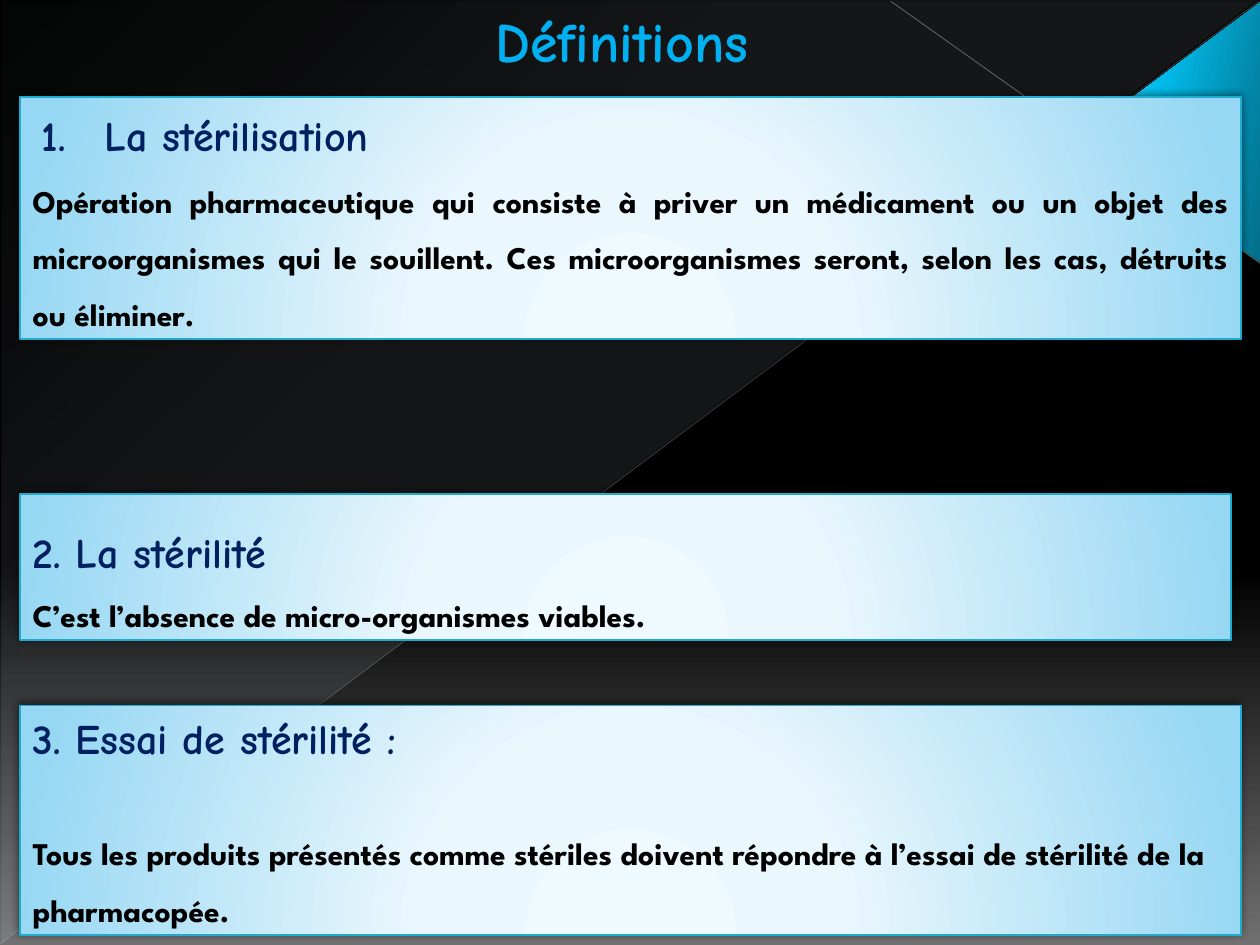
from dataclasses import dataclass

from lxml import etree
from pptx import Presentation
from pptx import util as u
from pptx.dml.color import RGBColor
from pptx.enum import shapes, text
from pptx.oxml import parse_xml
from pptx.oxml.ns import nsdecls, qn


@dataclass(frozen=True)
class Theme:
    """Fonts, type sizes, colours and gradient stops of the slide."""
    head_font: str = "Comic Neue"
    body_font: str = "League Spartan"
    title_size: int = 32
    head_size: int = 24
    body_size: int = 18
    title: str = "00B0F0"
    head: str = "002060"
    body: str = "000000"
    edge: str = "1EABCE"
    back: tuple = ((0, "000000", 100), (60, "000000", 100), (100, "707070", 100))
    veil: tuple = ((0, "DEF5FA", 10), (70, "DEF5FA", 8), (100, "DEF5FA", 1))
    wedge: tuple = ((0, "036E89", 100), (60, "01BCEB", 100), (100, "7CD1F2", 100))
    panel: tuple = ((0, "EEFAFF", 100), (34, "EAF7FD", 100), (100, "96D7F3", 100))


THEME = Theme()
GLOW = ('<a:path path="circle"><a:fillToRect l="50000" t="155000" '
        'r="50000" b="-55000"/></a:path>')


def slant(angle):
    """Return the direction of a linear gradient."""
    return f'<a:lin ang="{angle * 60000}" scaled="0"/>'


def blend(fill, props, stops, course):
    """Give the owner of props a gradient fill."""
    fill.solid()
    marks = "".join(
        f'<a:gs pos="{pos * 1000}"><a:srgbClr val="{color}">'
        f'<a:alpha val="{alpha * 1000}"/></a:srgbClr></a:gs>'
        for pos, color, alpha in stops)
    grad = parse_xml(f'<a:gradFill {nsdecls("a")} rotWithShape="1">'
                     f'<a:gsLst>{marks}</a:gsLst>{course}</a:gradFill>')
    props.replace(props.find(qn("a:solidFill")), grad)


def add_block(slide, kind, box, stops, course):
    """Add a preset shape with a gradient and no line."""
    block = slide.shapes.add_shape(kind, *map(u.Inches, box))
    block.shadow.inherit = False
    block.line.fill.background()
    blend(block.fill, block.element.spPr, stops, course)
    return block


def flip(shape):
    """Turn a shape upside down."""
    shape.element.spPr.find(qn("a:xfrm")).set("flipV", "1")


def add_rule(slide, start, end, color, width, alpha):
    """Add a thin, partly clear straight line."""
    rule = slide.shapes.add_connector(
        shapes.MSO_CONNECTOR.STRAIGHT, *map(u.Inches, start + end))
    rule.line.color.rgb = RGBColor.from_string(color)
    rule.line.width = u.Pt(width)
    props = rule.element.spPr
    tone = props.find(".//" + qn("a:srgbClr"))
    etree.SubElement(tone, qn("a:alpha")).set("val", str(alpha * 1000))
    etree.SubElement(props, qn("a:effectLst"))


def style(para, font, size, color, space=1.0):
    """Format a paragraph in bold with its line spacing."""
    para.font.name = font
    para.font.size = u.Pt(size)
    para.font.bold = True
    para.font.color.rgb = RGBColor.from_string(color)
    para.line_spacing = space
    para.space_before = u.Pt(0)
    para.alignment = text.PP_ALIGN.LEFT


def style_head(para, space=1.0):
    """Format a paragraph as a heading."""
    style(para, THEME.head_font, THEME.head_size, THEME.head, space)


def style_body(para):
    """Format a paragraph as a definition."""
    style(para, THEME.body_font, THEME.body_size, THEME.body, 1.5)


def add_panel(slide, box):
    """Add a glowing panel with a shadow and return its text frame."""
    panel = add_block(slide, shapes.MSO_SHAPE.RECTANGLE, box, THEME.panel, GLOW)
    panel.line.color.rgb = RGBColor.from_string(THEME.edge)
    panel.line.width = u.Pt(0.75)
    panel.element.spPr.find(qn("a:effectLst")).append(parse_xml(
        f'<a:outerShdw {nsdecls("a")} blurRad="{u.Pt(5)}" dist="{u.Pt(2)}" '
        f'dir="{245 * 60000}" rotWithShape="0"><a:srgbClr val="000000">'
        '<a:alpha val="50000"/></a:srgbClr></a:outerShdw>'))
    frame = panel.text_frame
    frame.word_wrap = True
    frame.vertical_anchor = text.MSO_ANCHOR.BOTTOM
    return frame


def fill_place(place, box, words):
    """Move a placeholder to the front, fill it and return its paragraph."""
    place.left, place.top, place.width, place.height = map(u.Inches, box)
    tree = place.element.getparent()
    tree.append(place.element)
    frame = place.text_frame
    frame.text = words
    frame.word_wrap = False
    frame.auto_size = text.MSO_AUTO_SIZE.NONE
    frame.vertical_anchor = text.MSO_ANCHOR.TOP
    return frame.paragraphs[0]


def number(para):
    """Number a paragraph with a hanging indent."""
    props = para._p.get_or_add_pPr()
    props.set("marL", str(u.Inches(0.5)))
    props.set("indent", str(-u.Inches(0.5)))
    etree.SubElement(props, qn("a:buFont")).set("typeface", "+mj-lt")
    etree.SubElement(props, qn("a:buAutoNum")).set("type", "arabicPeriod")
    rest = props.find(qn("a:defRPr"))
    if rest is not None:
        props.append(rest)


def add_scene(slide):
    """Draw the dark background with its wedge and lines."""
    back = slide.background.fill
    back.solid()
    blend(back, slide.element.find(".//" + qn("p:bgPr")), THEME.back, slant(90))
    kinds = shapes.MSO_SHAPE
    flip(add_block(slide, kinds.RIGHT_TRIANGLE, (0.01, 0.01, 9.98, 7.48),
                   THEME.veil, slant(133)))
    wedge = add_block(slide, kinds.ISOSCELES_TRIANGLE, (8.26, 0.34, 2.07, 1.42),
                      THEME.wedge, slant(258))
    wedge.adjustments[0] = 0.513
    wedge.rotation = 90
    flip(wedge)
    add_rule(slide, (10, 2.09), (7.07, 0.01), "C1C1C1", 0.47, 45)
    add_rule(slide, (0, 7.49), (9.99, 0.01), "B9B9B9", 0.39, 35)


def main():
    """Build the slide of definitions."""
    deck = Presentation()
    deck.slide_width, deck.slide_height = u.Inches(10), u.Inches(7.5)
    slide = deck.slides.add_slide(deck.slide_layouts[1])
    add_scene(slide)

    title = fill_place(slide.shapes.title, (3.83, 0, 2.72, 0.64), "Définitions")
    style(title, THEME.head_font, THEME.title_size, THEME.title)

    frame = add_panel(slide, (0.16, 0.77, 9.69, 1.92))
    frame.text = ("Opération pharmaceutique qui consiste à priver un médicament "
                  "ou un objet des microorganismes qui le souillent. Ces "
                  "microorganismes seront, selon les cas, détruits ou éliminer.")
    style_body(frame.paragraphs[0])
    frame.paragraphs[0].alignment = text.PP_ALIGN.JUSTIFY
    head = fill_place(slide.placeholders[1], (0.23, 0.82, 3.13, 0.5),
                      "La stérilisation")
    style_head(head)
    number(head)

    frame = add_panel(slide, (0.16, 3.92, 9.61, 1.16))
    frame.text = "2. La stérilité\nC’est l’absence de micro-organismes viables."
    style_head(frame.paragraphs[0], 1.5)
    style_body(frame.paragraphs[1])

    frame = add_panel(slide, (0.16, 5.6, 9.69, 1.82))
    frame.text = ("3. Essai de stérilité :\nTous les produits présentés comme "
                  "stériles doivent répondre à l’essai de stérilité de la "
                  "pharmacopée.")
    style_head(frame.paragraphs[0])
    style_body(frame.paragraphs[1])
    frame.paragraphs[1].space_before = u.Pt(30)
    deck.save("out.pptx")


if __name__ == "__main__":
    main()
